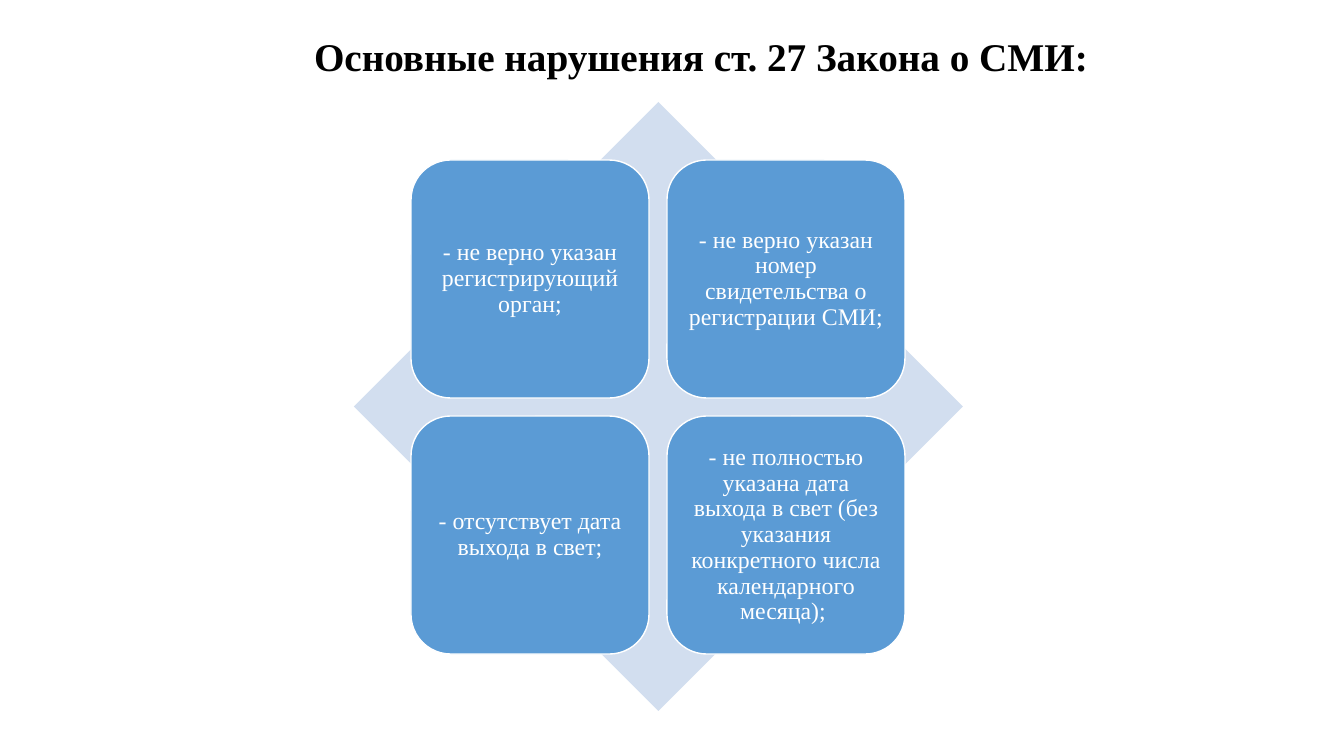
"""Build the slide on the main violations of article 27 of the mass media law."""
from pptx import Presentation
from pptx import util as u
from pptx.dml.color import RGBColor
from pptx.enum import shapes, text

FONT = "Times New Roman"
BLACK = RGBColor(0x00, 0x00, 0x00)
WHITE = RGBColor(0xFF, 0xFF, 0xFF)
BLUE = RGBColor(0x5B, 0x9B, 0xD5)
PALE_BLUE = RGBColor(0xD2, 0xDE, 0xEF)

TILE_LEFT, TILE_TOP, TILE_SIZE, TILE_STEP = 411, 160, 238, 256
VIOLATIONS = [
    "- не верно указан регистрирующий орган;",
    "- не верно указан номер свидетельства о регистрации СМИ;",
    "- отсутствует дата выхода в свет;",
    "- не полностью указана дата выхода в свет "
    "(без указания конкретного числа календарного месяца); ",
]


def px(n):
    return u.Emu(round(n * 914400 / 100.8))


def style_text(p, size, color, align, bold=False):
    p.alignment = align
    for r in p.runs:
        r.font.name = FONT
        r.font.size = u.Pt(size)
        r.font.bold = bold
        r.font.color.rgb = color


def add_title(s, title):
    sp = s.shapes.title
    sp.left, sp.top, sp.width, sp.height = px(304), px(27), px(816), px(57)
    tf = sp.text_frame
    tf.text = title
    tf.word_wrap = True
    tf.auto_size = text.MSO_AUTO_SIZE.NONE
    tf.vertical_anchor = text.MSO_ANCHOR.TOP
    style_text(tf.paragraphs[0], 28, BLACK, text.PP_ALIGN.LEFT, bold=True)


def add_square(s, kind, left, top, size, fill):
    sp = s.shapes.add_shape(kind, px(left), px(top), px(size), px(size))
    sp.shadow.inherit = False
    sp.fill.solid()
    sp.fill.fore_color.rgb = fill
    sp.line.fill.background()
    return sp


def add_tile(s, left, top, label):
    sp = add_square(s, shapes.MSO_SHAPE.ROUNDED_RECTANGLE, left, top, TILE_SIZE, BLUE)
    sp.line.color.rgb = WHITE
    sp.line.width = u.Pt(1)
    tf = sp.text_frame
    tf.text = label
    tf.word_wrap = True
    tf.vertical_anchor = text.MSO_ANCHOR.MIDDLE
    tf.margin_left = tf.margin_right = tf.margin_top = tf.margin_bottom = px(7)
    p = tf.paragraphs[0]
    p.line_spacing = 0.9
    style_text(p, 17, WHITE, text.PP_ALIGN.CENTER)


def main():
    prs = Presentation()
    prs.slide_width, prs.slide_height = px(1344), px(756)
    s = prs.slides.add_slide(prs.slide_layouts[5])
    add_title(s, "Основные нарушения ст. 27 Закона о СМИ:")
    add_square(s, shapes.MSO_SHAPE.DIAMOND, 354, 102, 609, PALE_BLUE)
    for i, label in enumerate(VIOLATIONS):
        row, col = divmod(i, 2)
        add_tile(s, TILE_LEFT + col * TILE_STEP, TILE_TOP + row * TILE_STEP, label)
    prs.save("out.pptx")


if __name__ == "__main__":
    main()
